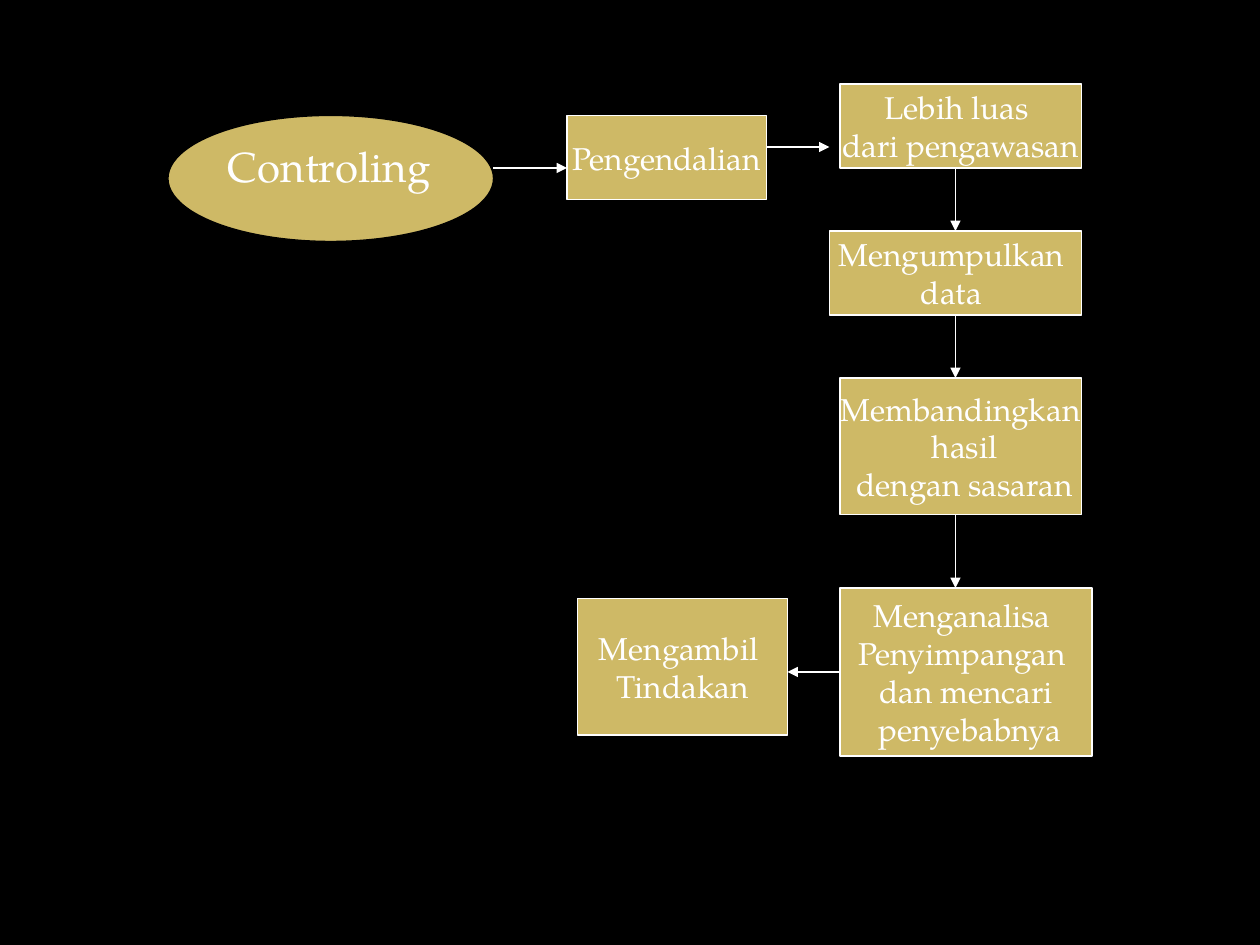
from dataclasses import dataclass

from lxml import etree
from pptx import Presentation, util as u
from pptx.dml.color import RGBColor
from pptx.enum import shapes, text
from pptx.oxml import ns

TOP, LEFT, BOTTOM = range(3)


@dataclass(frozen=True)
class Theme:
    """Colours, font and sizes of the flowchart."""
    background: RGBColor = RGBColor(0x00, 0x00, 0x00)
    gold: RGBColor = RGBColor(0xCE, 0xB9, 0x66)
    white: RGBColor = RGBColor(0xFF, 0xFF, 0xFF)
    font: str = "TeX Gyre Pagella"
    start_size: int = 24
    step_size: int = 18
    line_width: float = 0.75


class FlowPage:
    """Draws a flowchart on a grid of 120 columns by 90 rows."""

    COLUMNS, ROWS = 120, 90

    def __init__(self, deck, theme):
        """Add an empty page with the theme's background."""
        self.deck, self.theme = deck, theme
        self.page = deck.slides.add_slide(deck.slide_layouts[6])
        fill = self.page.background.fill
        fill.solid()
        fill.fore_color.rgb = theme.background

    def x(self, columns):
        """Turn columns into a length."""
        return u.Emu(round(self.deck.slide_width * columns / self.COLUMNS))

    def y(self, rows):
        """Turn rows into a length."""
        return u.Emu(round(self.deck.slide_height * rows / self.ROWS))

    def block(self, kind, place, outline):
        """Add a gold shape at column, row, width and height."""
        column, row, width, height = place
        block = self.page.shapes.add_shape(
            kind, self.x(column), self.y(row), self.x(width), self.y(height))
        block.shadow.inherit = False
        block.fill.solid()
        block.fill.fore_color.rgb = self.theme.gold
        block.line.color.rgb = outline
        block.line.width = u.Pt(self.theme.line_width)
        return block

    def add_lines(self, frame, lines, size, align):
        """Set each line as a paragraph."""
        for index, line in enumerate(lines):
            para = frame.add_paragraph() if index else frame.paragraphs[0]
            para.alignment = align
            span = para.add_run()
            span.text = line
            span.font.name = self.theme.font
            span.font.size = u.Pt(size)
            span.font.color.rgb = self.theme.white

    def start(self, place, label):
        """Add the ellipse that opens the flow."""
        oval = self.block(shapes.MSO_SHAPE.OVAL, place, self.theme.background)
        frame = oval.text_frame
        frame.word_wrap = True
        frame.vertical_anchor = text.MSO_ANCHOR.TOP
        self.add_lines(frame, [label], self.theme.start_size, text.PP_ALIGN.LEFT)

    def step(self, place, *lines):
        """Add a rectangle with centred lines."""
        box = self.block(shapes.MSO_SHAPE.RECTANGLE, place, self.theme.white)
        frame = box.text_frame
        frame.word_wrap = False
        frame.vertical_anchor = text.MSO_ANCHOR.MIDDLE
        self.add_lines(frame, lines, self.theme.step_size, text.PP_ALIGN.CENTER)
        return box

    def arrow(self, start, end, source=None, target=None):
        """Add an arrow, joined to (box, side) pairs where given."""
        arrow = self.page.shapes.add_connector(
            shapes.MSO_CONNECTOR.STRAIGHT,
            self.x(start[0]), self.y(start[1]), self.x(end[0]), self.y(end[1]))
        arrow.line.color.rgb = self.theme.white
        arrow.line.width = u.Pt(self.theme.line_width)
        properties = arrow._element.spPr
        outline = properties.find(ns.qn("a:ln"))
        etree.SubElement(outline, ns.qn("a:tailEnd"), type="triangle")
        etree.SubElement(properties, ns.qn("a:effectLst"))
        if source:
            arrow.begin_connect(*source)
        if target:
            arrow.end_connect(*target)


def main():
    """Build the controlling flowchart."""
    deck = Presentation()
    deck.slide_width, deck.slide_height = u.Inches(10), u.Inches(7.5)
    flow = FlowPage(deck, Theme())

    flow.start((16, 11, 31, 12), "Controling")
    flow.step((54, 11, 19, 8), "Pengendalian")
    flow.step((80, 8, 23, 8), "Lebih luas ", "dari pengawasan")
    collect = flow.step((79, 22, 24, 8), "Mengumpulkan ", "data ")
    flow.step((80, 36, 23, 13), "Membandingkan", " hasil", " dengan sasaran")
    analyse = flow.step((80, 56, 24, 16), "Menganalisa ", "Penyimpangan ",
                        "dan mencari", " penyebabnya")
    flow.step((55, 57, 20, 13), "Mengambil ", "Tindakan")

    flow.arrow((47, 16), (54, 16))
    flow.arrow((73, 14), (79, 14))
    flow.arrow((91, 16), (91, 22), target=(collect, TOP))
    flow.arrow((91, 30), (91, 36), source=(collect, BOTTOM))
    flow.arrow((91, 49), (91, 56))
    flow.arrow((80, 64), (75, 64), source=(analyse, LEFT))

    deck.save("out.pptx")


if __name__ == "__main__":
    main()
